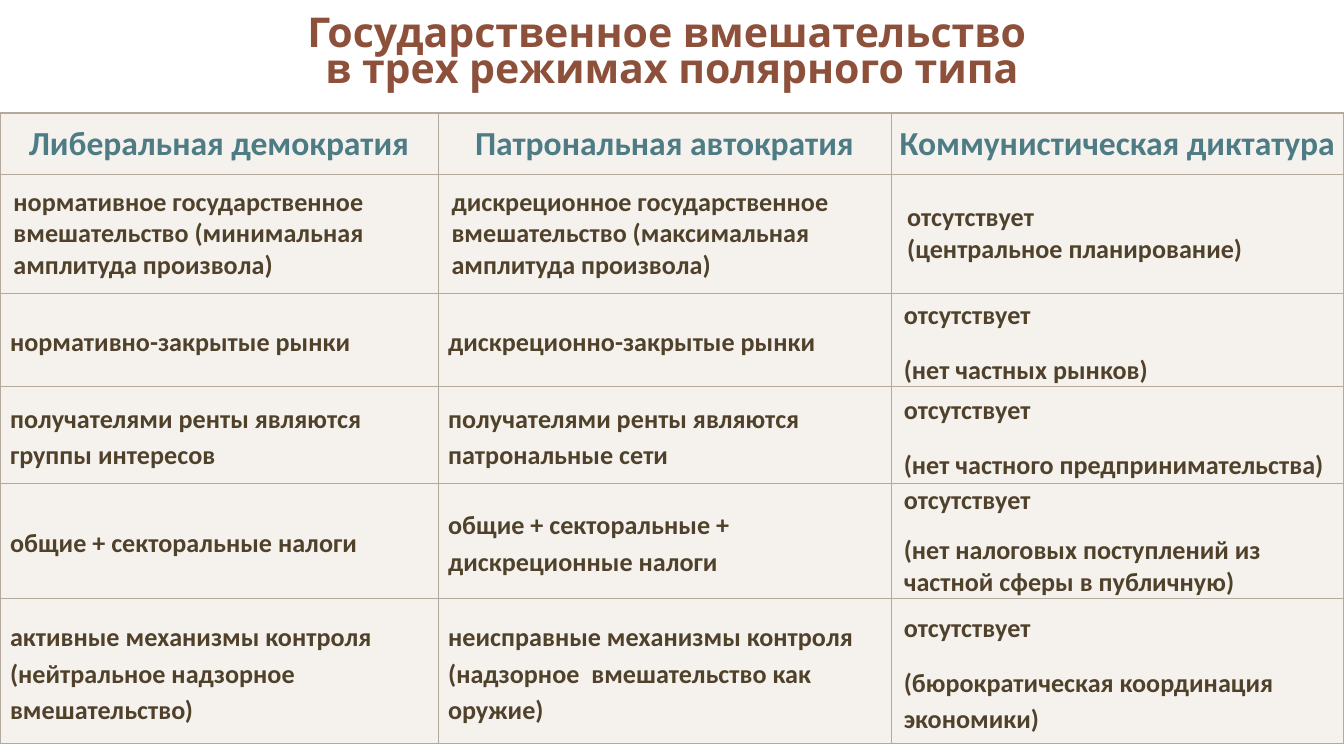
from lxml.etree import SubElement
from pptx import Presentation
from pptx.dml.color import RGBColor
from pptx.enum.text import MSO_ANCHOR, MSO_AUTO_SIZE, PP_ALIGN
from pptx.oxml.ns import qn
from pptx.util import Inches, Pt

TITLE_COLOR = RGBColor(0x8D, 0x50, 0x3B)
HEADER_COLOR = RGBColor(0x4D, 0x7C, 0x85)
BODY_COLOR = RGBColor(0x50, 0x41, 0x2B)
CELL_COLOR = RGBColor(0xEF, 0xEA, 0xE4)
BORDER_COLOR = RGBColor(0xB3, 0xA9, 0x9D)
CELL_OPACITY = 60

SLIDE_WIDTH = 10
SLIDE_HEIGHT = SLIDE_WIDTH * 9 / 16
COLUMN_WIDTHS = [3.26, 3.37, 3.37]
ROW_HEIGHTS = [0.46, 0.88, 0.67, 0.72, 0.85, 1.08]
TABLE_TOP = 0.84

TITLE = "Государственное вмешательство \vв трех режимах полярного типа"
REGIMES = [
    ["Либеральная демократия", "Патрональная автократия", "Коммунистическая диктатура"],
    ["нормативное государственное вмешательство (минимальная амплитуда произвола)",
     "дискреционное государственное вмешательство (максимальная амплитуда произвола)",
     "отсутствует\n(центральное планирование)"],
    ["нормативно-закрытые рынки",
     "дискреционно-закрытые рынки",
     "отсутствует\n(нет частных рынков)"],
    ["получателями ренты являются группы интересов",
     "получателями ренты являются патрональные сети",
     "отсутствует\n(нет частного предпринимательства)"],
    ["общие + секторальные налоги",
     "общие + секторальные + дискреционные налоги",
     "отсутствует\n(нет налоговых поступлений из частной сферы в публичную)"],
    ["активные механизмы контроля (нейтральное надзорное  вмешательство)",
     "неисправные механизмы контроля (надзорное  вмешательство как оружие)",
     "отсутствует\n(бюрократическая координация экономики)"],
]
LAST_ROW, LAST_COLUMN = len(ROW_HEIGHTS) - 1, len(COLUMN_WIDTHS) - 1
TAX_ROW = 4


def format_runs(paragraph, font_name, size, color):
    for run in paragraph.runs:
        run.font.name = font_name
        run.font.size = Pt(size)
        run.font.bold = True
        run.font.color.rgb = color


def add_title(slide):
    title = slide.shapes.title
    title.left, title.top = Inches(0.12), Inches(0.06)
    title.width, title.height = Inches(SLIDE_WIDTH - 2 * 0.12), Inches(0.69)
    frame = title.text_frame
    frame.text = TITLE
    frame.word_wrap = True
    frame.auto_size = MSO_AUTO_SIZE.NONE
    frame.vertical_anchor = MSO_ANCHOR.MIDDLE
    heading = frame.paragraphs[0]
    heading.alignment = PP_ALIGN.CENTER
    heading.line_spacing = 0.75
    format_runs(heading, "Open Sans", 22, TITLE_COLOR)


def set_borders(cell, row, column):
    """Draw 1 pt lines on the table's outline and 0.5 pt lines inside it."""
    outer_sides = {"a:lnL": column == 0, "a:lnR": column == LAST_COLUMN,
                   "a:lnT": row == 0, "a:lnB": row == LAST_ROW}
    properties = cell._tc.get_or_add_tcPr()
    for side, is_outer in outer_sides.items():
        line = SubElement(properties, qn(side), w=str(Pt(1 if is_outer else 0.5)))
        fill = SubElement(line, qn("a:solidFill"))
        SubElement(fill, qn("a:srgbClr"), val=str(BORDER_COLOR))


def set_fill(cell):
    cell.fill.solid()
    cell.fill.fore_color.rgb = CELL_COLOR
    tint = cell._tc.tcPr.find(qn("a:solidFill")).find(qn("a:srgbClr"))
    SubElement(tint, qn("a:alpha"), val=str(CELL_OPACITY * 1000))


def set_margins(cell, row):
    """Set the cell's margins, in points."""
    side, top, bottom = {0: (3, 0, 0), 1: (7.2, 3.6, 3.6)}.get(row, (5.4, 0.75, 0))
    cell.margin_left = cell.margin_right = Pt(side)
    cell.margin_top, cell.margin_bottom = Pt(top), Pt(bottom)


def format_text(cell, row, column):
    cell.vertical_anchor = MSO_ANCHOR.MIDDLE
    for paragraph in cell.text_frame.paragraphs:
        if row == 0:
            paragraph.alignment = PP_ALIGN.CENTER
            format_runs(paragraph, "Calibri", 18, HEADER_COLOR)
            continue
        if column == LAST_COLUMN:
            paragraph._p.get_or_add_pPr().set("marL", str(Inches(0.02)))
        if row > 1:
            paragraph.space_after = Pt(10)
            if (row, column) != (TAX_ROW, LAST_COLUMN):
                paragraph.line_spacing = 1.15
        format_runs(paragraph, "Calibri", 14, BODY_COLOR)


def add_regime_table(slide):
    table = slide.shapes.add_table(
        len(ROW_HEIGHTS), len(COLUMN_WIDTHS), 0, Inches(TABLE_TOP),
        Inches(SLIDE_WIDTH), Inches(sum(ROW_HEIGHTS))).table
    table.first_row = table.horz_banding = False
    for column, width in zip(table.columns, COLUMN_WIDTHS):
        column.width = Inches(width)
    for row, height in zip(table.rows, ROW_HEIGHTS):
        row.height = Inches(height)
    for row, regime_texts in enumerate(REGIMES):
        for column, regime_text in enumerate(regime_texts):
            cell = table.cell(row, column)
            cell.text_frame.text = regime_text
            set_borders(cell, row, column)
            set_fill(cell)
            set_margins(cell, row)
            format_text(cell, row, column)


def main():
    presentation = Presentation()
    presentation.slide_width = Inches(SLIDE_WIDTH)
    presentation.slide_height = Inches(SLIDE_HEIGHT)
    title_only = presentation.slide_layouts[5]
    slide = presentation.slides.add_slide(title_only)
    add_title(slide)
    add_regime_table(slide)
    presentation.save("out.pptx")


if __name__ == "__main__":
    main()
